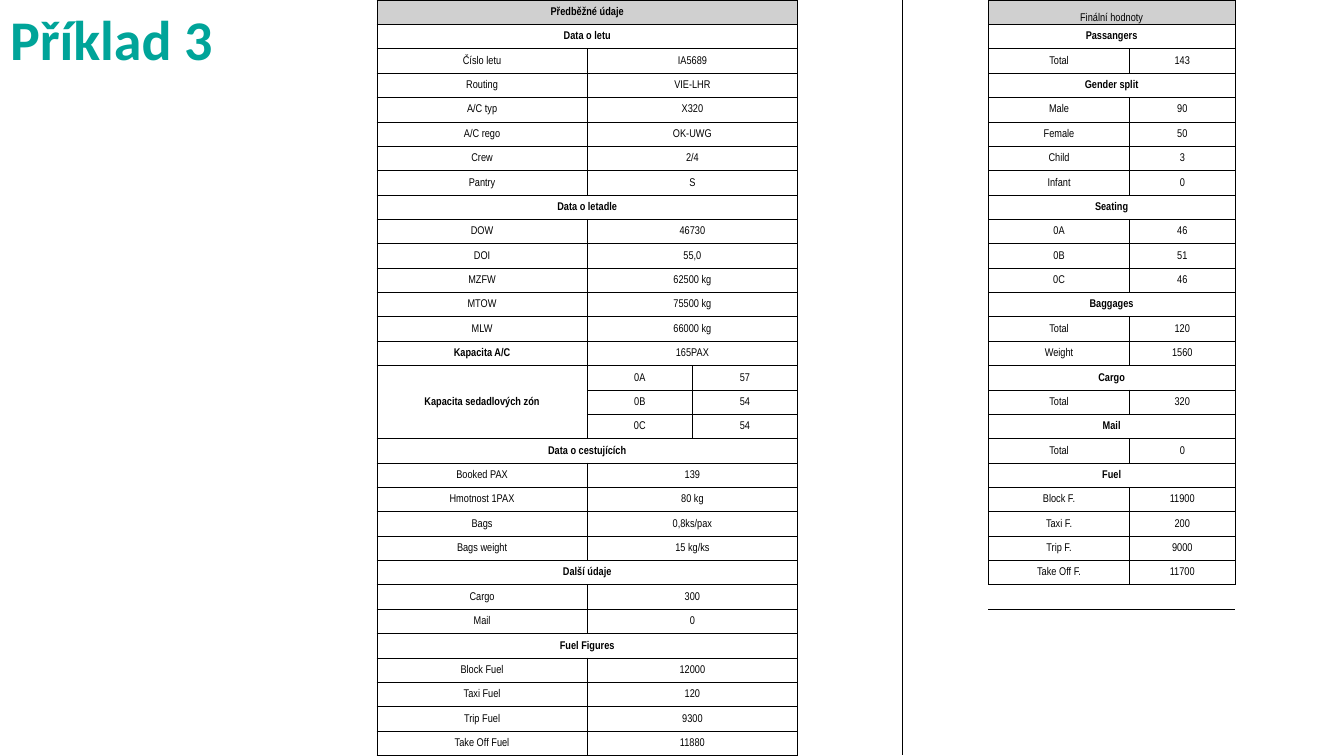
from lxml import etree
from pptx import Presentation
from pptx import util as u
from pptx.dml.color import RGBColor
from pptx.enum import text
from pptx.oxml.ns import qn

# Content: one item is a section heading, two a label and its value,
# three a seat zone with its group label (empty where the group continues)
TITLE = "Příklad 3"
PRELIMINARY = [
    ("Předběžné údaje",), ("Data o letu",),
    ("Číslo letu", "IA5689"), ("Routing", "VIE-LHR"), ("A/C typ", "X320"),
    ("A/C rego", "OK-UWG"), ("Crew", "2/4"), ("Pantry", "S"),
    ("Data o letadle",),
    ("DOW", "46730"), ("DOI", "55,0"), ("MZFW", "62500 kg"),
    ("MTOW", "75500 kg"), ("MLW", "66000 kg"), ("Kapacita A/C", "165PAX"),
    ("Kapacita sedadlových zón", "0A", "57"), ("", "0B", "54"), ("", "0C", "54"),
    ("Data o cestujících",),
    ("Booked PAX", "139"), ("Hmotnost 1PAX", "80 kg"),
    ("Bags", "0,8ks/pax"), ("Bags weight", "15 kg/ks"),
    ("Další údaje",), ("Cargo", "300"), ("Mail", "0"),
    ("Fuel Figures",),
    ("Block Fuel", "12000"), ("Taxi Fuel", "120"),
    ("Trip Fuel", "9300"), ("Take Off Fuel", "11880"),
]
FINAL = [
    ("Finální hodnoty",), ("Passangers",), ("Total", "143"),
    ("Gender split",), ("Male", "90"), ("Female", "50"), ("Child", "3"), ("Infant", "0"),
    ("Seating",), ("0A", "46"), ("0B", "51"), ("0C", "46"),
    ("Baggages",), ("Total", "120"), ("Weight", "1560"),
    ("Cargo",), ("Total", "320"), ("Mail",), ("Total", "0"),
    ("Fuel",), ("Block F.", "11900"), ("Taxi F.", "200"),
    ("Trip F.", "9000"), ("Take Off F.", "11700"),
]
BOLD_LABELS = {"Kapacita A/C", "Kapacita sedadlových zón"}
COLUMNS = [5.3, 2.65, 2.65, 2.65, 2.16, 3.56, 2.65]
LEFT_COLS, RIGHT_COLS = (0, 1, 2), (5, 6)
FONT, SIZE = "Arial Narrow", 8
BLACK, GREY, TEAL = "000000", "D0D0D0", "00A499"
NO_STYLE = "{2D5ABB26-0587-4C30-8999-92F81FD0307C}"


def color(value):
    return RGBColor.from_string(value)


def write(frame, words, font=FONT, size=SIZE, ink=BLACK, bold=False,
          align=text.PP_ALIGN.CENTER):
    paragraph = frame.paragraphs[0]
    paragraph.alignment = align
    run = paragraph.add_run()
    run.text = words
    run.font.name, run.font.size, run.font.bold = font, u.Pt(size), bold
    run.font.color.rgb = color(ink)
    return paragraph


def add_borders(cell, sides):
    properties = cell._tc.get_or_add_tcPr()
    for side in sides:
        line = etree.SubElement(properties, qn(f"a:ln{side}"), w=str(u.Pt(0.5)))
        fill = etree.SubElement(line, qn("a:solidFill"))
        etree.SubElement(fill, qn("a:srgbClr"), val=BLACK)


def fill_block(table, rows, columns):
    first, last = columns[0], columns[-1]
    for r, row in enumerate(rows):
        heading = len(row) == 1
        if heading:
            table.cell(r, first).merge(table.cell(r, last))
        elif len(row) == 2 and last > first + 1:
            table.cell(r, first + 1).merge(table.cell(r, last))
        for c, words in zip(columns, row):
            if words:
                bold = words in BOLD_LABELS or heading and words != "Finální hodnoty"
                write(table.cell(r, c).text_frame, words, bold=bold)
        for c in columns:
            if r == 0:
                table.cell(r, c).fill.solid()
                table.cell(r, c).fill.fore_color.rgb = color(GREY)


prs = Presentation()
prs.slide_width, prs.slide_height = u.Cm(33.87), u.Cm(19.05)
slide = prs.slides.add_slide(prs.slide_layouts[5])

# Title
title = slide.shapes.title
title.left, title.top, title.width, title.height = u.Cm(0), u.Cm(-0.03), u.Cm(32.8), u.Cm(2)
title.text_frame.vertical_anchor = text.MSO_ANCHOR.BOTTOM
write(title.text_frame, TITLE, font="Calibri", size=40, ink=TEAL, bold=True,
      align=text.PP_ALIGN.LEFT).line_spacing = 0.9

# Table grid
row_count = len(PRELIMINARY)
table = slide.shapes.add_table(row_count, len(COLUMNS), u.Cm(9.5), u.Cm(0),
                               u.Cm(sum(COLUMNS)), prs.slide_height).table
table.first_row = table.horz_banding = False
table._tbl.tblPr.find(qn("a:tableStyleId")).text = NO_STYLE
for column, width in zip(table.columns, COLUMNS):
    column.width = u.Cm(width)

# Cell margins, borders and the small type of the empty cells
for r in range(row_count):
    for c in range(len(COLUMNS)):
        cell = table.cell(r, c)
        cell.margin_left = cell.margin_right = cell.margin_top = u.Cm(0.02)
        cell.margin_bottom = 0
        cell.vertical_anchor = text.MSO_ANCHOR.MIDDLE
        in_final = r < len(FINAL)
        if c in LEFT_COLS or c in RIGHT_COLS and in_final:
            add_borders(cell, "LRTB")
        elif c == LEFT_COLS[-1] + 1:
            add_borders(cell, "L")
        elif c == RIGHT_COLS[0] - 1 and in_final:
            add_borders(cell, "R")
        elif c in RIGHT_COLS and r == len(FINAL):
            add_borders(cell, "T")
        cell.fill.background()
        etree.SubElement(cell.text_frame.paragraphs[0]._p, qn("a:endParaRPr"),
                         sz=str(SIZE * 100))

# Preliminary data on the left, final values on the right
fill_block(table, PRELIMINARY, LEFT_COLS)
fill_block(table, FINAL, RIGHT_COLS)
table.cell(0, RIGHT_COLS[0]).vertical_anchor = text.MSO_ANCHOR.BOTTOM
zone_rows = [r for r, row in enumerate(PRELIMINARY) if len(row) == 3]
table.cell(zone_rows[0], 0).merge(table.cell(zone_rows[-1], 0))

prs.save("out.pptx")
